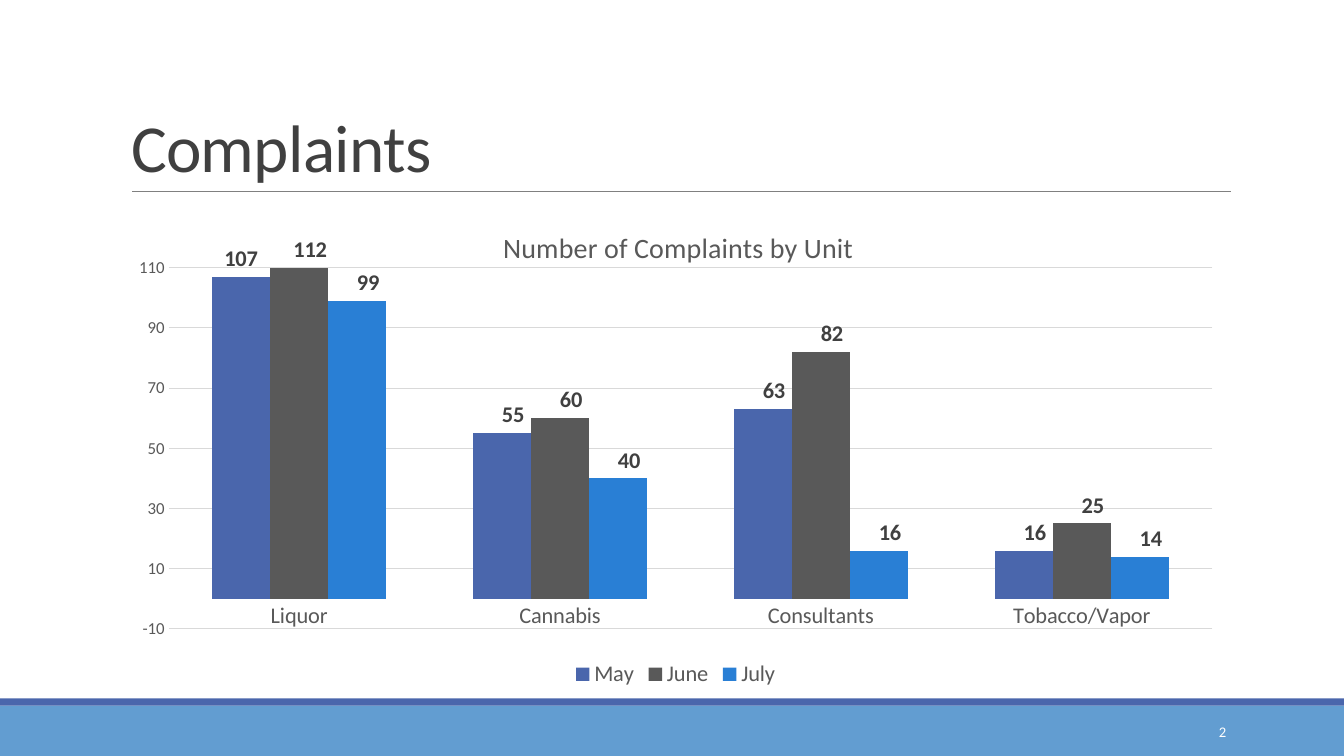
from dataclasses import dataclass

from lxml import etree
from pptx import Presentation
from pptx.chart.data import CategoryChartData
from pptx.dml.color import RGBColor
from pptx.enum.chart import XL_CHART_TYPE, XL_LABEL_POSITION, XL_LEGEND_POSITION, XL_TICK_MARK
from pptx.enum.shapes import MSO_CONNECTOR, MSO_SHAPE
from pptx.enum.text import MSO_ANCHOR, PP_ALIGN
from pptx.oxml.ns import qn
from pptx.util import Inches, Pt

COLUMNS = XL_CHART_TYPE.COLUMN_CLUSTERED
OUTSIDE_END = XL_LABEL_POSITION.OUTSIDE_END
LEGEND_BOTTOM = XL_LEGEND_POSITION.BOTTOM
NO_TICK = XL_TICK_MARK.NONE
RECTANGLE = MSO_SHAPE.RECTANGLE
STRAIGHT = MSO_CONNECTOR.STRAIGHT
BOTTOM, MIDDLE = MSO_ANCHOR.BOTTOM, MSO_ANCHOR.MIDDLE
LEFT, RIGHT = PP_ALIGN.LEFT, PP_ALIGN.RIGHT

WHITE = RGBColor(0xFF, 0xFF, 0xFF)
INDIGO = RGBColor(0x4A, 0x66, 0xAC)
SKY = RGBColor(0x62, 0x9D, 0xD1)
BLUE = RGBColor(0x29, 0x7F, 0xD5)
SLATE = RGBColor(0x59, 0x59, 0x59)
CHARCOAL = RGBColor(0x40, 0x40, 0x40)
RULE_GREY = RGBColor(0x80, 0x80, 0x80)
GRID_GREY = RGBColor(0xD9, 0xD9, 0xD9)
FONT = "Calibri"


@dataclass
class Band:
    top: float
    height: float
    color: RGBColor


@dataclass
class Month:
    name: str
    complaints: tuple[int, ...]
    color: RGBColor
    label_shifts: tuple[float, ...]  # share of the chart width


BANDS = [Band(7, 0.5, SKY), Band(6.93, 0.07, INDIGO)]
UNITS = ["Liquor", "Cannabis", "Consultants", "Tobacco/Vapor"]
MONTHS = [
    Month("May", (107, 55, 63, 16), INDIGO, (0, 0.01, 0.01, 0.01)),
    Month("June", (112, 60, 82, 25), SLATE, (0.01, 0.01, 0.01, 0.01)),
    Month("July", (99, 40, 16, 14), BLUE, (0.01, 0.01, 0.01, 0.01)),
]


def style_font(font, size: float, color: RGBColor, bold: bool = False) -> None:
    font.name = FONT
    font.size = Pt(size)
    font.bold = bold
    font.color.rgb = color


def make_layout(**settings: str | float):
    layout = etree.Element(qn("c:layout"))
    manual = etree.SubElement(layout, qn("c:manualLayout"))
    for name, value in settings.items():
        etree.SubElement(manual, qn(f"c:{name}")).set("val", str(value))
    return layout


def add_band(page, band: Band) -> None:
    bar = page.shapes.add_shape(
        RECTANGLE, 0, Inches(band.top), Inches(13.33), Inches(band.height))
    bar.shadow.inherit = False
    bar.fill.solid()
    bar.fill.fore_color.rgb = band.color
    bar.line.fill.background()


def add_rule(page) -> None:
    rule = page.shapes.add_connector(
        STRAIGHT, Inches(1.31), Inches(1.9), Inches(12.21), Inches(1.9))
    rule.line.color.rgb = RULE_GREY
    rule.line.width = Pt(0.5)
    etree.SubElement(rule._element.spPr, qn("a:effectLst"))


def set_title(page) -> None:
    title = page.shapes.title
    title.left, title.top = Inches(1.2), Inches(0.31)
    title.width, title.height = Inches(12.05), Inches(1.59)
    title.text_frame.vertical_anchor = BOTTOM
    para = title.text_frame.paragraphs[0]
    para.alignment = LEFT
    para.line_spacing = 0.85
    span = para.add_run()
    span.text = "Complaints"
    style_font(span.font, 48, CHARCOAL)
    span.font._element.set("spc", "-50")


def add_page_number(page) -> None:
    box = page.shapes.add_textbox(Inches(10.83), Inches(7.06), Inches(1.43), Inches(0.4))
    box.text_frame.word_wrap = True
    box.text_frame.vertical_anchor = MIDDLE
    para = box.text_frame.paragraphs[0]
    para.alignment = RIGHT
    span = para.add_run()
    span.text = "2"
    style_font(span.font, 10.5, WHITE)


def style_series(series, month: Month) -> None:
    series.format.fill.solid()
    series.format.fill.fore_color.rgb = month.color
    series.invert_if_negative = False
    labels = series.data_labels
    labels.show_value = True
    labels.position = OUTSIDE_END
    style_font(labels.font, 16, CHARCOAL, bold=True)
    # Each label sits slightly right of its column
    for index, shift in enumerate(month.label_shifts):
        label = series.points[index].data_label
        label.position = OUTSIDE_END
        style_font(label.font, 16, CHARCOAL, bold=True)
    for node, shift in zip(labels._element.findall(qn("c:dLbl")), month.label_shifts):
        node.insert(1, make_layout(x=shift, y=0))


def style_axes(chart) -> None:
    units, counts = chart.category_axis, chart.value_axis
    for axis, size in ((units, 16), (counts, 12)):
        axis.major_tick_mark = axis.minor_tick_mark = NO_TICK
        axis.format.line.fill.background()
        style_font(axis.tick_labels.font, size, SLATE)
    counts.minimum_scale, counts.maximum_scale = -10, 110
    counts.major_unit = 20
    counts.has_major_gridlines = True
    counts.major_gridlines.format.line.color.rgb = GRID_GREY
    counts.major_gridlines.format.line.width = Pt(0.75)


def add_complaints_chart(page) -> None:
    table = CategoryChartData()
    table.categories = UNITS
    for month in MONTHS:
        table.add_series(month.name, month.complaints)
    chart = page.shapes.add_chart(
        COLUMNS, Inches(1.2), Inches(2.02), Inches(11), Inches(4.85), table).chart
    chart.font.name = FONT
    chart.font.size = Pt(10)

    # Chart title and legend
    chart.has_title = True
    span = chart.chart_title.text_frame.paragraphs[0].add_run()
    span.text = "Number of Complaints by Unit"
    style_font(span.font, 20, SLATE)
    title_node = chart.chart_title._element
    for old in title_node.findall(qn("c:layout")):
        title_node.remove(old)
    title_node.find(qn("c:tx")).addnext(
        make_layout(xMode="edge", yMode="edge", x=0.34, y=0.04))
    chart.has_legend = True
    chart.legend.position = LEGEND_BOTTOM
    chart.legend.include_in_layout = False
    style_font(chart.legend.font, 16, SLATE)

    # Columns, axes and plot area
    plot = chart.plots[0]
    plot.gap_width, plot.overlap = 150, 0
    plot.vary_by_categories = False
    for series, month in zip(plot.series, MONTHS):
        style_series(series, month)
    style_axes(chart)
    area = chart._chartSpace.chart.plotArea
    for old in area.findall(qn("c:layout")):
        area.remove(old)
    area.insert(0, make_layout(layoutTarget="inner", xMode="edge", yMode="edge",
                               x=0.043, y=0.131, w=0.941, h=0.739))


def main() -> None:
    deck = Presentation()
    deck.slide_width, deck.slide_height = Inches(13.33), Inches(7.5)
    page = deck.slides.add_slide(deck.slide_layouts[5])
    for band in BANDS:
        add_band(page, band)
    add_rule(page)
    set_title(page)
    add_complaints_chart(page)
    add_page_number(page)
    deck.save("out.pptx")


if __name__ == "__main__":
    main()
